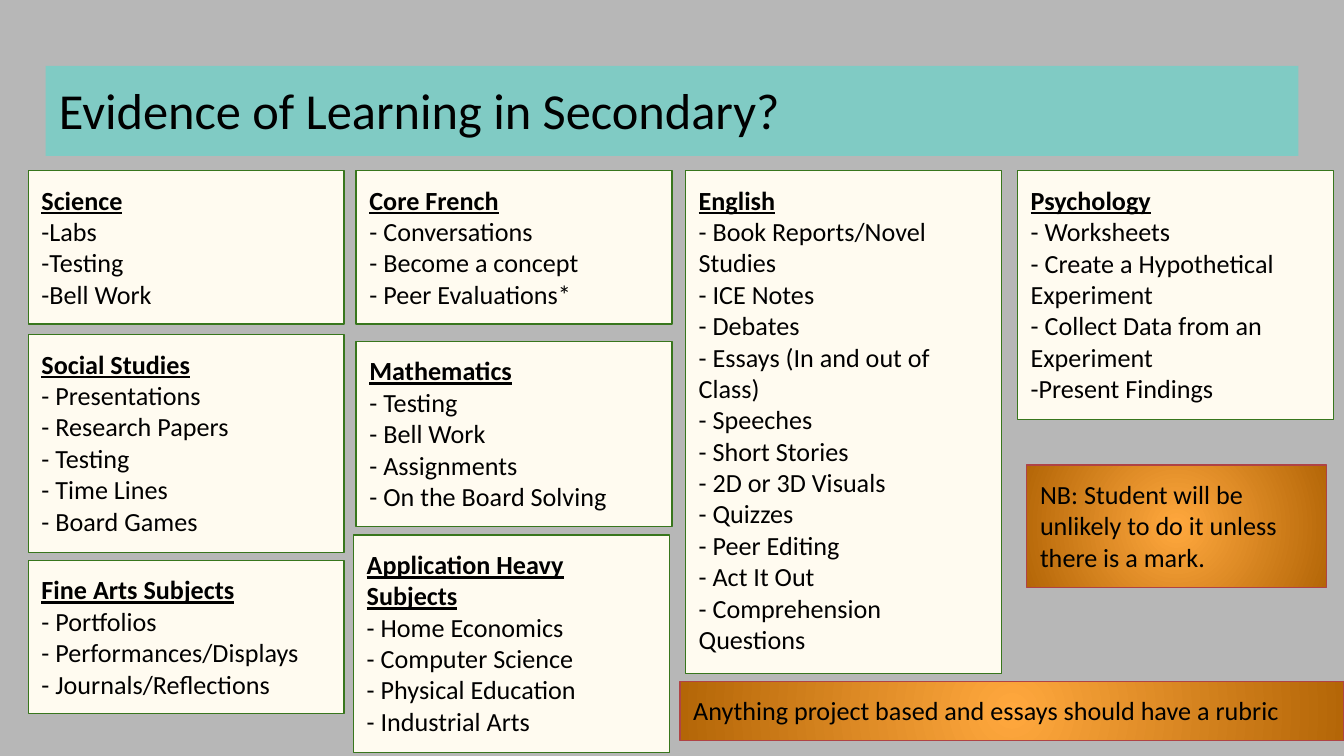
"""Build the slide on evidence of learning in secondary subjects."""
from lxml import etree
from pptx import Presentation
from pptx import util as u
from pptx.dml.color import RGBColor
from pptx.enum import shapes, text
from pptx.oxml.ns import qn

BLACK = RGBColor(0x00, 0x00, 0x00)
GREY = RGBColor(0xB7, 0xB7, 0xB7)
TEAL = RGBColor(0x80, 0xCB, 0xC4)
CREAM = RGBColor(0xFF, 0xFB, 0xF0)
GREEN = RGBColor(0x38, 0x76, 0x1D)
AMBER = RGBColor(0xFF, 0xA8, 0x3E)
BROWN = RGBColor(0xB4, 0x66, 0x07)
RED = RGBColor(0xAF, 0x43, 0x45)

PAD, LINES_PER_INCH = 0.1, 4.24
COLUMNS = [0.21, 2.65, 5.1, 7.57]
CARD_WIDTH, TOP = 2.35, 1.27
FRAME = {
    "word_wrap": True,
    "vertical_anchor": text.MSO_ANCHOR.TOP,
    **{f"margin_{side}": u.Inches(PAD) for side in ("left", "right", "top", "bottom")},
}


def add_panel(left, top, width, height, lines, size=14, heading=False):
    panel = slide.shapes.add_shape(
        shapes.MSO_SHAPE.RECTANGLE, *map(u.Inches, (left, top, width, height)))
    panel.shadow.inherit = False
    frame = panel.text_frame
    for name, value in FRAME.items():
        setattr(frame, name, value)
    frame.text = "\n".join(lines)
    for index, paragraph in enumerate(frame.paragraphs):
        paragraph.alignment = text.PP_ALIGN.LEFT
        strong = heading and index == 0
        font = {"name": "Calibri", "size": u.Pt(size), "bold": strong, "underline": strong}
        for name, value in font.items():
            setattr(paragraph.runs[0].font, name, value)
        paragraph.runs[0].font.color.rgb = BLACK
    return panel


def height_of(rows):
    return round(2 * PAD + rows / LINES_PER_INCH, 2)


deck = Presentation()
deck.slide_width = u.Inches(10)
deck.slide_height = deck.slide_width * 9 // 16
slide = deck.slides.add_slide(deck.slide_layouts[6])
slide.background.fill.solid()
slide.background.fill.fore_color.rgb = GREY

title = add_panel(0.34, 0.49, 9.32, 0.67, ["Evidence of Learning in Secondary?"], size=27)
title.fill.solid()
title.fill.fore_color.rgb = TEAL
title.line.fill.background()

subjects = [
    (COLUMNS[2], TOP, 15, ["English", "- Book Reports/Novel Studies", "- ICE Notes",
                           "- Debates", "- Essays (In and out of Class)", "- Speeches",
                           "- Short Stories", "- 2D or 3D Visuals", "- Quizzes",
                           "- Peer Editing", "- Act It Out", "- Comprehension Questions"]),
    (COLUMNS[0], TOP, 4, ["Science", "-Labs", "-Testing", "-Bell Work"]),
    (COLUMNS[3], TOP, 7, ["Psychology", "- Worksheets",
                          "- Create a Hypothetical Experiment",
                          "- Collect Data from an Experiment", "-Present Findings"]),
    (COLUMNS[0], 4.17, 4, ["Fine Arts Subjects", "- Portfolios",
                           "- Performances/Displays", "- Journals/Reflections"]),
    (COLUMNS[0], 2.49, 6, ["Social Studies", "- Presentations", "- Research Papers",
                           "- Testing", "- Time Lines", "- Board Games"]),
    (COLUMNS[1] - 0.02, 3.98, 6, ["Application Heavy Subjects", "- Home Economics",
                                  "- Computer Science", "- Physical Education",
                                  "- Industrial Arts"]),
    (COLUMNS[1], TOP, 4, ["Core French", "- Conversations", "- Become a concept",
                          "- Peer Evaluations*"]),
    (COLUMNS[1], 2.54, 5, ["Mathematics", "- Testing", "- Bell Work", "- Assignments",
                           "- On the Board Solving"]),
]
for left, top, rows, lines in subjects:
    card = add_panel(left, top, CARD_WIDTH, height_of(rows), lines, heading=True)
    card.fill.solid()
    card.fill.fore_color.rgb = CREAM
    card.line.color.rgb = GREEN
    card.line.width = u.Pt(0.75)

remarks = [
    (5.06, 5.07, 4.94, 1, "Anything project based and essays should have a rubric"),
    (7.64, 3.46, 2.23, 3, "NB: Student will be unlikely to do it unless there is a mark."),
]
for left, top, width, rows, remark in remarks:
    note = add_panel(left, top, width, height_of(rows), [remark])
    note.fill.gradient()
    for stop, position, color in zip(note.fill.gradient_stops, (0, 1), (AMBER, BROWN)):
        stop.position = position
        stop.color.rgb = color
    gradient = note._element.spPr.find(qn("a:gradFill"))
    gradient.remove(gradient.find(qn("a:lin")))
    circle = etree.SubElement(gradient, qn("a:path"), {"path": "circle"})
    etree.SubElement(circle, qn("a:fillToRect"), dict.fromkeys("ltrb", "50000"))
    note.line.color.rgb = RED
    note.line.width = u.Pt(0.75)

deck.save("out.pptx")
